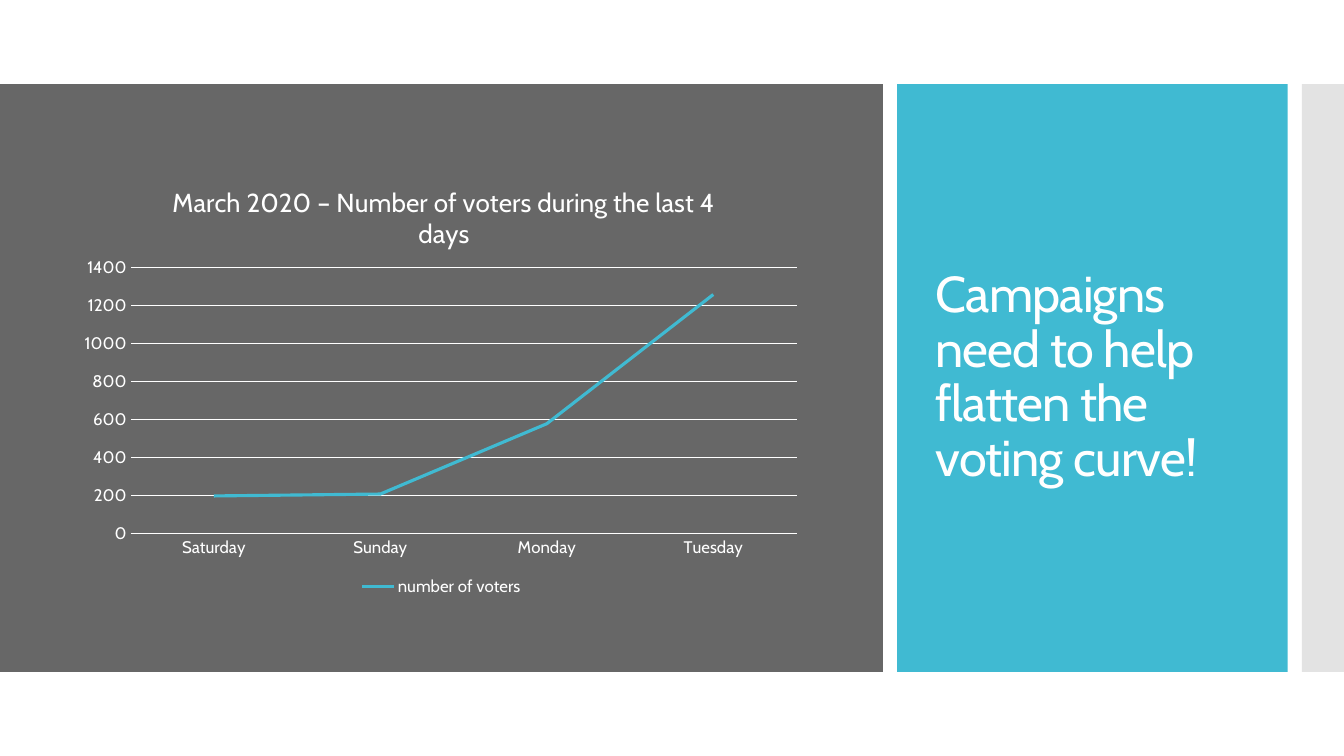
"""Build a slide pairing a voter line chart with a headline panel."""
import dataclasses

import pptx
import pptx.chart.data
import pptx.dml.color
import pptx.enum.chart
import pptx.enum.shapes
import pptx.enum.text
import pptx.oxml
import pptx.oxml.ns
import pptx.util


@dataclasses.dataclass(frozen=True)
class Theme:
    font: str = "Cabin"
    white: str = "FFFFFF"
    dark: str = "676767"
    accent: str = "40BAD2"
    pale: str = "C8C8C8"
    headline_size: float = 36
    chart_title_size: float = 18.6
    label_size: float = 12
    grid_width: float = 0.75
    series_width: float = 2.25


class SlideBuilder:
    columns = 16
    rows = 9

    def __init__(self, deck, theme):
        self.theme = theme
        self.column = deck.slide_width / self.columns
        self.row = deck.slide_height / self.rows
        self.page = deck.slides.add_slide(deck.slide_layouts[6])
        self.paint(self.page.background.fill, theme.white)

    def place(self, left, top, width, height):
        return (round(left * self.column), round(top * self.row),
                round(width * self.column), round(height * self.row))

    def paint(self, fill, color):
        fill.solid()
        fill.fore_color.rgb = pptx.dml.color.RGBColor.from_string(color)

    def style_font(self, font, size):
        font.name = self.theme.font
        font.size = pptx.util.Pt(size)
        font.bold = False
        font.color.rgb = pptx.dml.color.RGBColor.from_string(self.theme.white)

    def style_line(self, line, color, width):
        self.paint(line.fill, color)
        line.width = pptx.util.Pt(width)

    def panel(self, area, color, opacity=100):
        box = self.page.shapes.add_shape(
            pptx.enum.shapes.MSO_SHAPE.RECTANGLE, *self.place(*area))
        box.shadow.inherit = False
        box.line.fill.background()
        self.paint(box.fill, color)
        if opacity < 100:
            tone = box.fill._xPr.find(".//" + pptx.oxml.ns.qn("a:srgbClr"))
            alpha = tone.makeelement(pptx.oxml.ns.qn("a:alpha"), {"val": str(opacity * 1000)})
            tone.append(alpha)

    def headline(self, area, text):
        box = self.page.shapes.add_textbox(*self.place(*area))
        frame = box.text_frame
        frame.word_wrap = True
        frame.vertical_anchor = pptx.enum.text.MSO_ANCHOR.MIDDLE
        frame.text = text
        para = frame.paragraphs[0]
        para.line_spacing = 0.9
        span = para.runs[0]
        self.style_font(span.font, self.theme.headline_size)
        span.font._element.set("spc", "-60")

    def fix_layout(self, element, successor_tags, **settings):
        for old in element.findall(pptx.oxml.ns.qn("c:layout")):
            element.remove(old)
        values = "".join(f'<c:{key} val="{value}"/>' for key, value in settings.items())
        layout = pptx.oxml.parse_xml(
            f'<c:layout {pptx.oxml.ns.nsdecls("c")}>'
            f"<c:manualLayout>{values}</c:manualLayout></c:layout>")
        element.insert_element_before(layout, *successor_tags)

    def line_chart(self, area, title, categories, name, values):
        theme = self.theme
        data = pptx.chart.data.CategoryChartData()
        data.categories = categories
        data.add_series(name, values)
        chart = self.page.shapes.add_chart(
            pptx.enum.chart.XL_CHART_TYPE.LINE, *self.place(*area), data).chart
        self.style_font(chart.font, theme.label_size)

        chart.has_title = True
        chart.chart_title.text_frame.text = title
        span = chart.chart_title.text_frame.paragraphs[0].runs[0]
        self.style_font(span.font, theme.chart_title_size)
        chart.chart_title.include_in_layout = False
        self.fix_layout(chart.chart_title._element, ("c:overlay", "c:spPr", "c:txPr"),
                        xMode="edge", yMode="edge", x=0.13, y=0.05)
        self.fix_layout(chart._chartSpace.chart.plotArea, ("c:lineChart",),
                        layoutTarget="inner", xMode="edge", yMode="edge",
                        x=0.08, y=0.25, w=0.9, h=0.6)

        chart.has_legend = True
        chart.legend.position = pptx.enum.chart.XL_LEGEND_POSITION.BOTTOM
        chart.legend.include_in_layout = False
        self.style_font(chart.legend.font, theme.label_size)

        for axis in (chart.category_axis, chart.value_axis):
            axis.major_tick_mark = pptx.enum.chart.XL_TICK_MARK.NONE
            axis.minor_tick_mark = pptx.enum.chart.XL_TICK_MARK.NONE
            self.style_font(axis.tick_labels.font, theme.label_size)
        self.style_line(chart.category_axis.format.line, theme.white, theme.grid_width)
        scale = chart.value_axis
        scale.minimum_scale, scale.maximum_scale, scale.major_unit = 0, 1400, 200
        scale.format.line.fill.background()
        scale.has_major_gridlines = True
        self.style_line(scale.major_gridlines.format.line, theme.white, theme.grid_width)

        plot = chart.plots[0]
        plot.vary_by_categories = False
        series = plot.series[0]
        series.smooth = False
        series.marker.style = pptx.enum.chart.XL_MARKER_STYLE.NONE
        self.style_line(series.format.line, theme.accent, theme.series_width)


def main():
    deck = pptx.Presentation()
    deck.slide_width = pptx.util.Inches(13.33)
    deck.slide_height = pptx.util.Inches(7.5)
    theme = Theme()
    slide = SlideBuilder(deck, theme)
    slide.panel((0, 1, 10.51, 7), theme.dark)
    slide.panel((10.68, 1, 4.65, 7), theme.accent)
    slide.headline((11.02, 1.48, 3.86, 6.04),
                   "Campaigns need to help flatten the voting curve!")
    slide.panel((15.5, 1, 0.5, 7), theme.pale, opacity=50)
    slide.line_chart((0.85, 1.87, 8.81, 5.28),
                     "March 2020 – Number of voters during the last 4 days",
                     ("Saturday", "Sunday", "Monday", "Tuesday"),
                     "number of voters", (200, 210, 580, 1260))
    deck.save("out.pptx")


if __name__ == "__main__":
    main()
